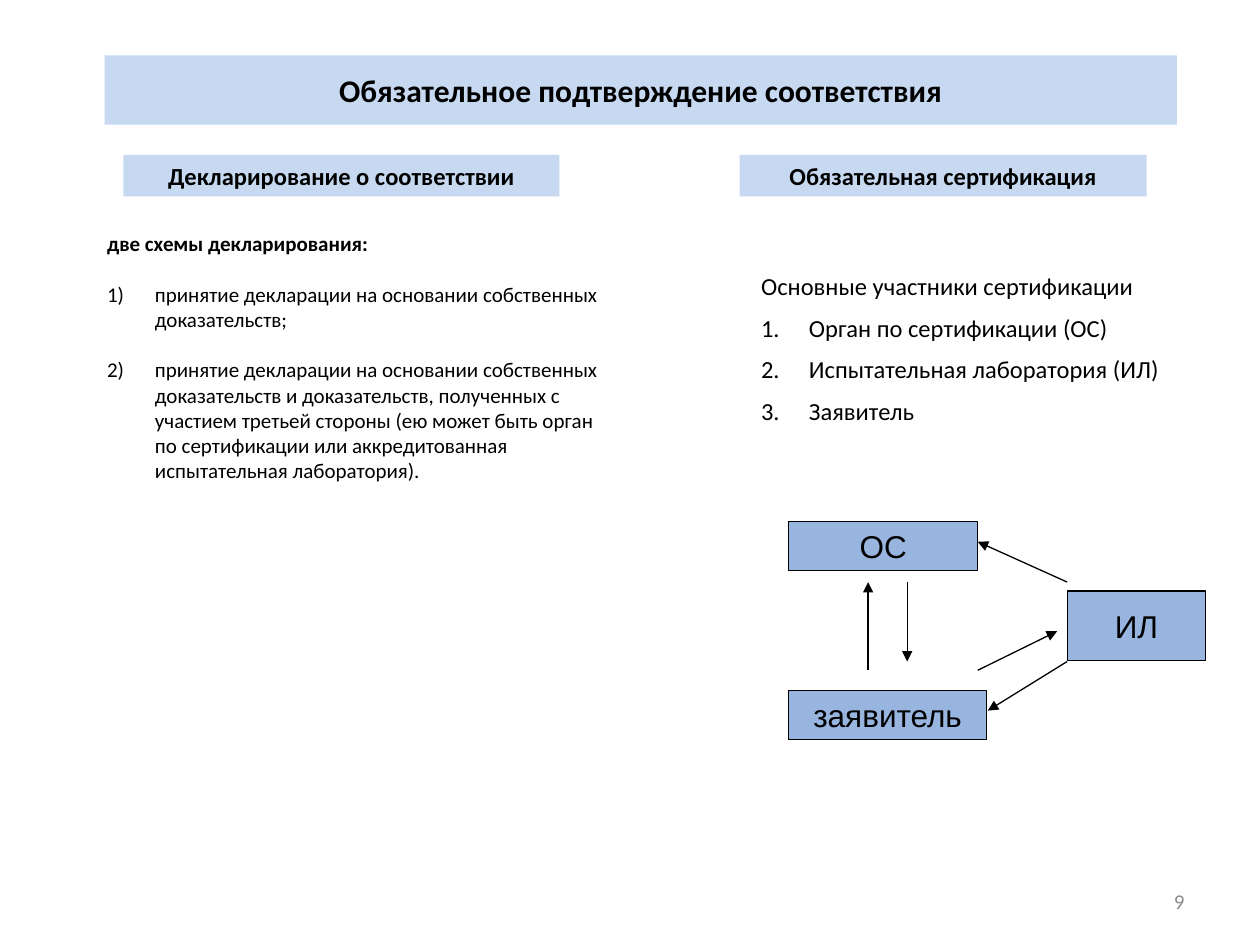
from lxml import etree
from pptx import Presentation
from pptx.dml.color import RGBColor
from pptx.enum.shapes import MSO_CONNECTOR, MSO_SHAPE
from pptx.enum.text import MSO_ANCHOR, MSO_AUTO_SIZE, PP_ALIGN
from pptx.oxml.ns import qn
from pptx.util import Inches, Pt

LEFT, CENTER, RIGHT = PP_ALIGN.LEFT, PP_ALIGN.CENTER, PP_ALIGN.RIGHT
TOP, MIDDLE = MSO_ANCHOR.TOP, MSO_ANCHOR.MIDDLE
BLACK, GREY, PALE, BLUE = "000000", "8C8C8C", "C6D9F1", "98B5E0"
COMPARISON_LAYOUT = 4
INDENT = 0.38

TITLE = ("Обязательное подтверждение соответствия", (0.83, 0.44, 8.51, 0.55))

# placeholder index, text, box
HEADINGS = [
    (1, "Декларирование о соответствии", (0.98, 1.23, 3.46, 0.33)),
    (3, "Обязательная сертификация", (5.87, 1.23, 3.23, 0.33)),
]

# placeholder index, box, size, gap in points, numbering, bold lead, lead, items
LISTS = [
    (2, (0.75, 1.78, 4.25, 2.3), 12, 14.5, "arabicParenR", True,
     "две схемы декларирования:", [
         "принятие декларации на основании собственных доказательств;",
         "принятие декларации на основании собственных доказательств и "
         "доказательств, полученных с участием третьей стороны (ею может быть "
         "орган по сертификации или аккредитованная испытательная лаборатория).",
     ]),
    (4, (5.94, 2.1, 3.47, 1.61), 14, 7, "arabicPeriod", False,
     "Основные участники сертификации", [
         "Орган по сертификации (ОС)",
         "Испытательная лаборатория (ИЛ)",
         "Заявитель",
     ]),
]

PARTICIPANTS = [
    ("заявитель", (6.26, 5.48, 1.57, 0.39)),
    ("ОС", (6.26, 4.14, 1.5, 0.39)),
    ("ИЛ", (8.47, 4.69, 1.1, 0.55)),
]

ARROWS = [
    ((6.89, 5.32), (6.89, 4.62)),
    ((7.2, 4.62), (7.2, 5.25)),
    ((8.47, 4.62), (7.76, 4.3)),
    ((8.47, 5.25), (7.84, 5.64)),
    ((7.76, 5.32), (8.39, 5.01)),
]

PAGE_NUMBER = ("9", (7.17, 6.95, 2.33, 0.4))


def rgb(color):
    return RGBColor.from_string(color)


def paint(sp, color):
    sp.fill.solid()
    sp.fill.fore_color.rgb = rgb(color)


def place(sp, box):
    sp.left, sp.top, sp.width, sp.height = map(Inches, box)


def write(sp, lines, size, align=LEFT, anchor=TOP, font="Calibri", color=BLACK,
          bold=False, gap=0, wrap=True):
    """Fill a shape with paragraphs, the gap standing between them."""
    tf = sp.text_frame
    tf.text = "\n".join(lines)
    tf.auto_size = MSO_AUTO_SIZE.NONE
    tf.word_wrap = wrap
    tf.vertical_anchor = anchor
    for i, p in enumerate(tf.paragraphs):
        p.alignment = align
        p.space_before = Pt(gap if i else 0)
        p.font.name, p.font.size, p.font.bold = font, Pt(size), bold
        p.font.color.rgb = rgb(color)
    return tf.paragraphs


def set_bullet(p, numbering=None):
    """Give a paragraph a hanging indent, with automatic numbers if asked."""
    pPr = p._p.get_or_add_pPr()
    pPr.set("marL", str(Inches(INDENT)))
    pPr.set("indent", str(-Inches(INDENT)))
    bullet = etree.Element(qn("a:buAutoNum" if numbering else "a:buNone"))
    if numbering:
        bullet.set("type", numbering)
    pPr.find(qn("a:defRPr")).addprevious(bullet)


def round_corners(sp):
    geom = etree.Element(qn("a:prstGeom"), prst="roundRect")
    etree.SubElement(geom, qn("a:avLst"))
    sp._element.spPr.find(qn("a:xfrm")).addnext(geom)


def add_participant(slide, name, box):
    sp = slide.shapes.add_shape(MSO_SHAPE.RECTANGLE, *map(Inches, box))
    sp.shadow.inherit = False
    paint(sp, BLUE)
    sp.line.color.rgb = rgb(BLACK)
    sp.line.width = Pt(0.75)
    write(sp, [name], 18, CENTER, MIDDLE, font="Arial", wrap=False)


def add_arrow(slide, start, end):
    line = slide.shapes.add_connector(MSO_CONNECTOR.STRAIGHT,
                                      *map(Inches, start + end))
    line.line.color.rgb = rgb(BLACK)
    line.line.width = Pt(0.75)
    etree.SubElement(line.line._get_or_add_ln(), qn("a:tailEnd"), type="triangle")
    etree.SubElement(line._element.spPr, qn("a:effectLst"))


def main():
    prs = Presentation()
    prs.slide_width, prs.slide_height = Inches(10), Inches(7.5)
    slide = prs.slides.add_slide(prs.slide_layouts[COMPARISON_LAYOUT])
    holders = {sp.placeholder_format.idx: sp for sp in slide.placeholders}

    title, box = TITLE
    sp = slide.shapes.title
    place(sp, box)
    round_corners(sp)
    paint(sp, PALE)
    write(sp, [title], 18, CENTER, MIDDLE, bold=True)

    for idx, heading, box in HEADINGS:
        place(holders[idx], box)
        paint(holders[idx], PALE)
        write(holders[idx], [heading], 14, CENTER, bold=True)

    for idx, box, size, gap, numbering, bold, lead, items in LISTS:
        place(holders[idx], box)
        first, *rest = write(holders[idx], [lead] + items, size, gap=gap)
        first.font.bold = bold
        set_bullet(first)
        for p in rest:
            set_bullet(p, numbering)

    for name, box in PARTICIPANTS:
        add_participant(slide, name, box)
    for start, end in ARROWS:
        add_arrow(slide, start, end)

    number, box = PAGE_NUMBER
    sp = slide.shapes.add_textbox(*map(Inches, box))
    write(sp, [number], 12, RIGHT, MIDDLE, color=GREY)

    prs.save("out.pptx")


if __name__ == "__main__":
    main()
